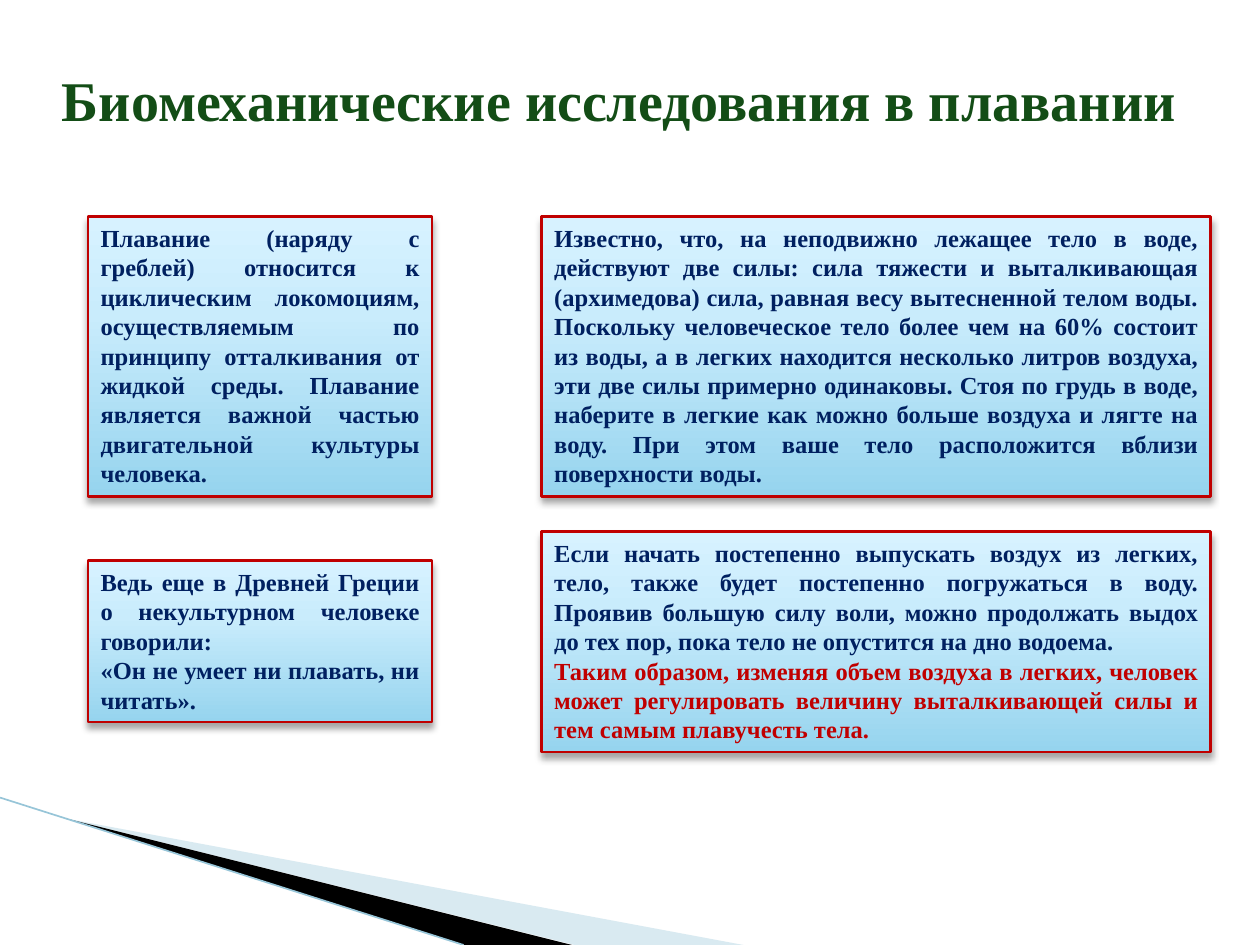
from copy import deepcopy

from lxml import etree
from pptx import Presentation
from pptx.dml.color import RGBColor
from pptx.enum.shapes import MSO_CONNECTOR, MSO_SHAPE
from pptx.enum.text import MSO_ANCHOR, PP_ALIGN
from pptx.oxml.ns import qn
from pptx.util import Inches, Pt

FONT = "Times New Roman"
NAVY, RED, GREEN = "002060", "C00000", "134D16"
GRADIENT = [(0, "96D4EE"), (0.65, "C9ECFC"), (1, "D7F2FF")]

LEFT, LEFT_WIDTH = 0.7, 2.73
RIGHT, RIGHT_WIDTH = 4.3, 5.31
TOP, TOP_HEIGHT = 1.72, 2.22

# Each card: box (left, top, width, height) and its paragraphs with colours
CARDS = [
    ((LEFT, TOP, LEFT_WIDTH, TOP_HEIGHT), [
        ("Плавание (наряду с греблей) относится к циклическим локомоциям, "
         "осуществляемым по принципу отталкивания от жидкой среды. Плавание "
         "является важной частью двигательной культуры человека.", NAVY)]),
    ((RIGHT, TOP, RIGHT_WIDTH, TOP_HEIGHT), [
        ("Известно, что, на неподвижно лежащее тело в воде, действуют две силы: "
         "сила тяжести и выталкивающая (архимедова) сила, равная весу "
         "вытесненной телом воды. Поскольку человеческое тело более чем на 60% "
         "состоит из воды, а в легких находится несколько литров воздуха, эти "
         "две силы примерно одинаковы. Стоя по грудь в воде, наберите в легкие "
         "как можно больше воздуха и лягте на воду. При этом ваше тело "
         "расположится вблизи поверхности воды.", NAVY)]),
    ((LEFT, 4.45, LEFT_WIDTH, 1.28), [
        ("Ведь еще в Древней Греции о некультурном человеке говорили:", NAVY),
        ("«Он не умеет ни плавать, ни читать».", NAVY)]),
    ((RIGHT, 4.22, RIGHT_WIDTH, 1.75), [
        ("Если начать постепенно выпускать воздух из легких, тело, также будет "
         "постепенно погружаться в воду. Проявив большую силу воли, можно "
         "продолжать выдох до тех пор, пока тело не опустится на дно водоема.",
         NAVY),
        ("Таким образом, изменяя объем воздуха в легких, человек может "
         "регулировать величину выталкивающей силы и тем самым плавучесть "
         "тела.", RED)]),
]


def color(value):
    return RGBColor.from_string(value)


def set_font(paragraph, size, value):
    paragraph.font.name = FONT
    paragraph.font.size = Pt(size)
    paragraph.font.bold = True
    paragraph.font.color.rgb = color(value)


def place(shape, box):
    shape.left, shape.top, shape.width, shape.height = map(Inches, box)


def add_wedge(slide, points, fill, alpha=100):
    corners = [(Inches(x), Inches(y)) for x, y in points]
    builder = slide.shapes.build_freeform(*corners[0])
    builder.add_line_segments(corners[1:], close=True)
    shape = builder.convert_to_shape()
    shape.shadow.inherit = False
    shape.line.fill.background()
    shape.fill.solid()
    shape.fill.fore_color.rgb = color(fill)
    if alpha < 100:
        fill_color = shape._element.spPr.find(".//" + qn("a:srgbClr"))
        etree.SubElement(fill_color, qn("a:alpha"), val=str(alpha * 1000))


def add_corner(slide, left, top, bottom):
    """Two wedges and an edge line sweeping down from the left side."""
    tip = (left + 0.54, top + 0.17)
    add_wedge(slide, [tip, (left + 5.9, bottom), (left + 4.56, bottom)], "A0CBDC", 40)
    add_wedge(slide, [tip, (left + 4.54, bottom), (left + 3.68, bottom)], "000000")
    edge = slide.shapes.add_connector(
        MSO_CONNECTOR.STRAIGHT,
        Inches(left), Inches(top), Inches(left + 3.68), Inches(bottom))
    edge.line.color.rgb = color("97C5D8")
    edge.line.width = Pt(0.95)
    etree.SubElement(edge._element.spPr, qn("a:effectLst"))


def add_title(slide, box, text):
    title = slide.shapes.title
    place(title, box)
    frame = title.text_frame
    frame.text = text
    frame.word_wrap = True
    frame.vertical_anchor = MSO_ANCHOR.TOP
    paragraph = frame.paragraphs[0]
    paragraph.alignment = PP_ALIGN.LEFT
    set_font(paragraph, 32, GREEN)


def set_gradient(shape):
    shape.fill.gradient()
    stop_list = shape._element.spPr.find(".//" + qn("a:gsLst"))
    stop_list.append(deepcopy(stop_list[0]))
    for stop, (position, value) in zip(shape.fill.gradient_stops, GRADIENT):
        stop.position = position
        stop.color.rgb = color(value)
    shape.fill.gradient_angle = 90


def set_shadow(shape):
    shape.shadow.inherit = False
    effects = shape._element.spPr.find(qn("a:effectLst"))
    shadow = etree.SubElement(
        effects, qn("a:outerShdw"), blurRad=str(Pt(4)), dist=str(Pt(3)),
        dir="5400000", rotWithShape="0")
    shadow_color = etree.SubElement(shadow, qn("a:srgbClr"), val="000000")
    etree.SubElement(shadow_color, qn("a:alpha"), val="35000")


def add_card(slide, box, paragraphs):
    shape = slide.shapes.add_shape(MSO_SHAPE.RECTANGLE, *map(Inches, box))
    set_gradient(shape)
    shape.line.color.rgb = color(RED)
    shape.line.width = Pt(1.5)
    set_shadow(shape)
    frame = shape.text_frame
    frame.word_wrap = True
    frame.vertical_anchor = MSO_ANCHOR.TOP
    for index, (text, value) in enumerate(paragraphs):
        paragraph = frame.add_paragraph() if index else frame.paragraphs[0]
        paragraph.text = text
        paragraph.alignment = PP_ALIGN.JUSTIFY
        set_font(paragraph, 14, value)


def main():
    presentation = Presentation()
    presentation.slide_width, presentation.slide_height = Inches(10), Inches(7.5)
    slide = presentation.slides.add_slide(presentation.slide_layouts[5])

    # Corner decoration, title, text cards
    add_corner(slide, left=0, top=6.33, bottom=7.5)
    add_title(slide, (0.39, 0.47, 9.14, 0.64), "Биомеханические исследования в плавании")
    for box, paragraphs in CARDS:
        add_card(slide, box, paragraphs)

    presentation.save("out.pptx")


if __name__ == "__main__":
    main()
